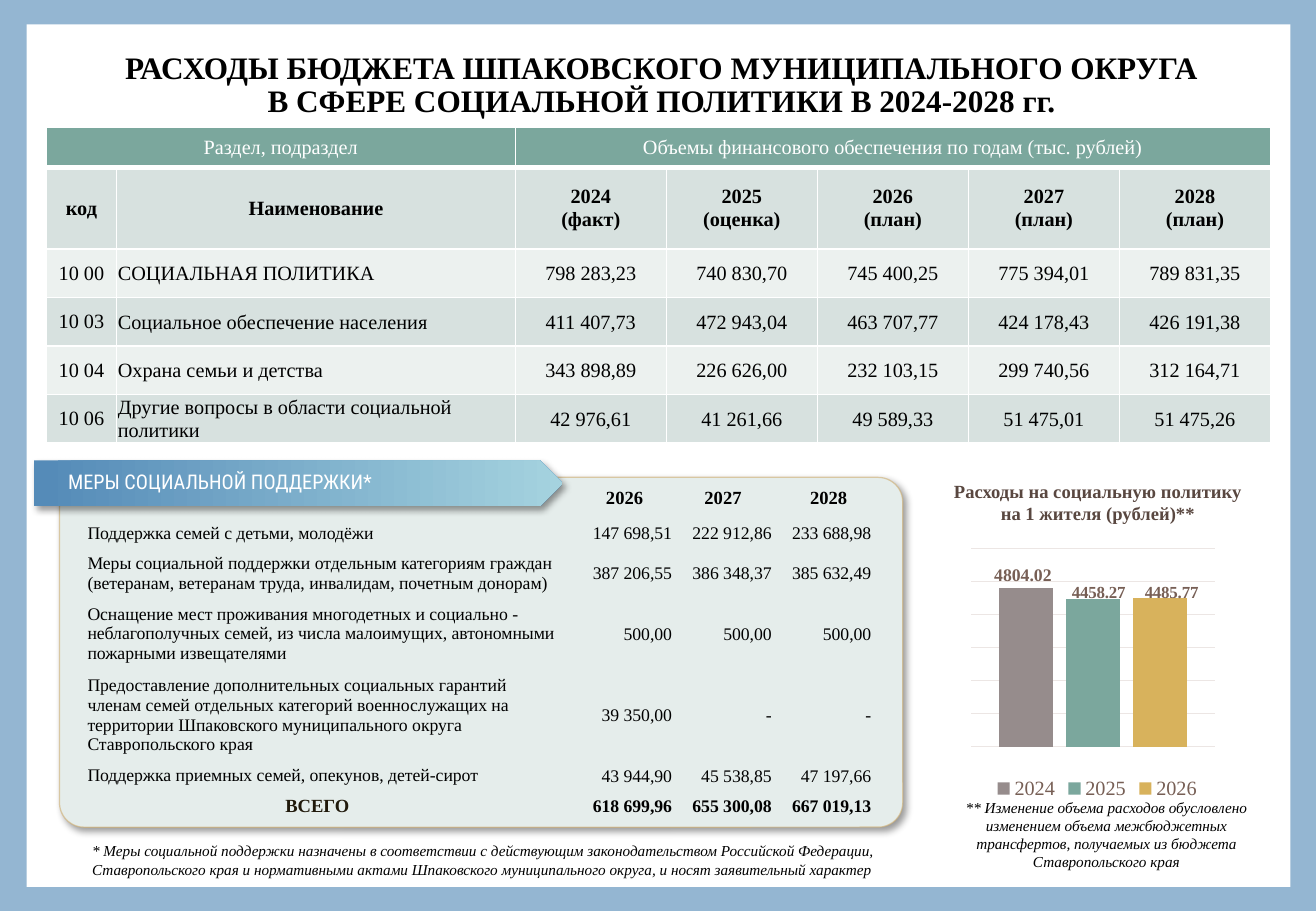
"""Build the slide on social policy spending of the Shpakovsky district."""
from dataclasses import dataclass
from typing import Any

import pptx
import pptx.chart.data
import pptx.dml.color
import pptx.enum.chart
import pptx.enum.shapes
import pptx.enum.text
import pptx.oxml.ns
import pptx.util
from lxml import etree

Pt = pptx.util.Pt
ALIGN = pptx.enum.text.PP_ALIGN
SHAPE = pptx.enum.shapes.MSO_SHAPE
MIDDLE = pptx.enum.text.MSO_ANCHOR.MIDDLE
WIDTH, HEIGHT = pptx.util.Inches(10.83), pptx.util.Inches(7.5)
SERIF = "Times New Roman"
PLAIN = "{2D5ABB26-0587-4C30-8999-92F81FD0307C}"

COLORS = {
    "back": "94B6D2", "white": "FFFFFF", "black": "000000", "panel": "E5EDEB",
    "gold": "D0AF72", "head": "7BA79D", "dark": "D7E1DF", "light": "ECF1EF",
    "brown": "594740", "label": "775F55", "grid": "ECE6E4", "total": "20190B",
    "start": "558BB8", "end": "A5D3DF",
    "2024": "968C8C", "2025": "7BA79D", "2026": "D8B25C",
}
FORMS: dict[str, dict[str, Any]] = {
    "title": {"name": SERIF, "size": Pt(18.5), "bold": True},
    "cell": {"name": SERIF, "size": Pt(12), "bold": False},
    "strong": {"name": SERIF, "size": Pt(12), "bold": True},
    "sub": {"name": SERIF, "size": Pt(11), "bold": True},
    "small": {"name": SERIF, "size": Pt(10.5), "bold": False},
    "sum": {"name": SERIF, "size": Pt(10.5), "bold": True},
    "mark": {"name": SERIF, "size": Pt(10), "bold": True},
    "note": {"name": SERIF, "size": Pt(9), "italic": True},
    "tag": {"name": "Roboto Condensed", "size": Pt(12), "bold": False},
}


@dataclass(frozen=True)
class Box:
    left: float
    top: float
    width: float
    height: float

    def place(self) -> tuple[int, int, int, int]:
        return wide(self.left), high(self.top), wide(self.width), high(self.height)


@dataclass(frozen=True)
class Label:
    box: Box
    lines: list[str]
    form: str
    color: str = "black"
    align: Any = ALIGN.CENTER
    space: float = 1.0


@dataclass(frozen=True)
class Bar:
    year: str
    value: float
    form: str
    shift: tuple[float, float]


LABELS = [
    Label(Box(5.91, 5.07, 88.64, 8.8), ["РАСХОДЫ БЮДЖЕТА ШПАКОВСКОГО МУНИЦИПАЛЬНОГО ОКРУГА",
          "В СФЕРЕ СОЦИАЛЬНОЙ ПОЛИТИКИ В 2024-2028 гг."], "title", space=0.9),
    Label(Box(71.47, 52, 23.91, 6.27),
          ["Расходы на социальную политику на 1 жителя (рублей)**"], "sub", "brown"),
    Label(Box(72.11, 86.93, 23.91, 9.47),
          ["** Изменение объема расходов обусловлено изменением объема межбюджетных "
           "трансфертов, получаемых из бюджета Ставропольского края"], "note"),
    Label(Box(6.09, 91.73, 62.51, 5.33),
          ["* Меры социальной поддержки назначены в соответствии с действующим законодательством "
           "Российской Федерации, Ставропольского края и нормативными актами Шпаковского "
           "муниципального округа, и носят заявительный характер"], "note", align=ALIGN.LEFT),
]
BUDGET = [
    ["Раздел, подраздел", "", "Объемы финансового обеспечения по годам (тыс. рублей)", "", "", "", ""],
    ["код", "Наименование", "2024\n(факт)", "2025\n(оценка)", "2026\n(план)", "2027\n(план)", "2028\n(план)"],
    ["10 00", "СОЦИАЛЬНАЯ ПОЛИТИКА", "798 283,23", "740 830,70", "745 400,25", "775 394,01", "789 831,35"],
    ["10 03", "Социальное обеспечение населения",
     "411 407,73", "472 943,04", "463 707,77", "424 178,43", "426 191,38"],
    ["10 04", "Охрана семьи и детства", "343 898,89", "226 626,00", "232 103,15", "299 740,56", "312 164,71"],
    ["10 06", "Другие вопросы в области социальной политики",
     "42 976,61", "41 261,66", "49 589,33", "51 475,01", "51 475,26"],
]
SUPPORT = [
    ["", "2026", "2027", "2028"],
    ["Поддержка семей с детьми, молодёжи", "147 698,51", "222 912,86", "233 688,98"],
    ["Меры социальной поддержки отдельным категориям граждан (ветеранам, ветеранам труда, "
     "инвалидам, почетным донорам)", "387 206,55", "386 348,37", "385 632,49"],
    ["Оснащение мест проживания многодетных и социально - неблагополучных семей, из числа "
     "малоимущих, автономными пожарными извещателями", "500,00", "500,00", "500,00"],
    ["Предоставление дополнительных социальных гарантий членам семей отдельных категорий "
     "военнослужащих на территории Шпаковского муниципального округа Ставропольского края",
     "39 350,00", "-", "-"],
    ["Поддержка приемных семей, опекунов, детей-сирот", "43 944,90", "45 538,85", "47 197,66"],
    ["ВСЕГО", "618 699,96", "655 300,08", "667 019,13"],
]
BARS = [Bar("2024", 4804.02, "sum", (-0.01, 0.01)), Bar("2025", 4458.27, "mark", (0.02, 0.03)),
        Bar("2026", 4485.77, "mark", (0.04, 0.03))]


def wide(share: float) -> int:
    return round(WIDTH * share / 100)


def high(share: float) -> int:
    return round(HEIGHT * share / 100)


def tint(name: str) -> pptx.dml.color.RGBColor:
    return pptx.dml.color.RGBColor.from_string(COLORS[name])


def node(parent: Any, tag: str, **attrs: str) -> Any:
    return etree.SubElement(parent, pptx.oxml.ns.qn(tag), attrs)


def style(font: Any, form: str, color: str) -> None:
    for key, value in FORMS[form].items():
        setattr(font, key, value)
    font.color.rgb = tint(color)


def write(frame: Any, lines: list[str], form: str, color: str, align: Any, space: Any = 1.0) -> None:
    frame.word_wrap = True
    for spot, line in enumerate(lines):
        para = frame.add_paragraph() if spot else frame.paragraphs[0]
        para.alignment, para.line_spacing = align, space
        run = para.add_run()
        run.text = line
        style(run.font, form, color)


def inset(cell: Any, left: float, top: float, right: float, base: float) -> None:
    cell.margin_left, cell.margin_right = wide(left), wide(right)
    cell.margin_top, cell.margin_bottom = high(top), high(base)


def edge(cell: Any, base: float) -> None:
    for side in "LRTB":
        line = node(cell._tc.get_or_add_tcPr(), f"a:ln{side}", w=str(Pt(base if side == "B" else 1)))
        node(node(line, "a:solidFill"), "a:srgbClr", val=COLORS["white"])


def shade(shape: Any) -> None:
    shape.shadow.inherit = False
    group = shape._element.spPr.find(pptx.oxml.ns.qn("a:effectLst"))
    cast = node(group, "a:outerShdw", blurRad=str(Pt(4)), dist=str(Pt(3)), dir="2700000",
                algn="tl", rotWithShape="0")
    node(node(cast, "a:srgbClr", val=COLORS["black"]), "a:alpha", val="40000")


def block(slide: Any, kind: Any, box: Box, color: str) -> Any:
    shape = slide.shapes.add_shape(kind, *box.place())
    shape.fill.solid()
    shape.fill.fore_color.rgb = tint(color)
    shape.line.fill.background()
    shape.shadow.inherit = False
    return shape


def table(slide: Any, box: Box, cols: list[float], rows: list[float]) -> Any:
    grid = slide.shapes.add_table(len(rows), len(cols), *box.place()).table
    grid.first_row = grid.horz_banding = False
    grid._tbl.tblPr.find(pptx.oxml.ns.qn("a:tableStyleId")).text = PLAIN
    for col, share in zip(grid.columns, cols):
        col.width = wide(share)
    for row, share in zip(grid.rows, rows):
        row.height = high(share)
    return grid


def budget(slide: Any) -> None:
    grid = table(slide, Box(3.51, 14, 93.05, 34.65), [5.36, 30.29] + [11.48] * 5, [4.4, 8.93] + [5.33] * 4)
    for r, row in enumerate(BUDGET):
        for c, text in enumerate(row):
            cell = grid.cell(r, c)
            edge(cell, 1 if r else 3)
            cell.fill.solid()
            cell.fill.fore_color.rgb = tint("head" if r == 0 else "dark" if r % 2 else "light")
            cell.vertical_anchor = MIDDLE
            if r > 1 and c:
                inset(cell, 0.09, 0.13, 0.09, 0)
            align = ALIGN.LEFT if r > 1 and c == 1 else ALIGN.CENTER
            write(cell.text_frame, text.split("\n"), "strong" if r == 1 else "cell",
                  "black" if r else "white", align)
    grid.cell(0, 0).merge(grid.cell(0, 1))
    grid.cell(0, 2).merge(grid.cell(0, 6))


def support(slide: Any) -> None:
    grid = table(slide, Box(5.82, 52.67, 60.48, 37.46), [37.95, 7.39, 7.57, 7.57],
                 [4.13, 3.47, 5.33, 8, 9.87, 3.33, 3.33])
    last = len(SUPPORT) - 1
    for r, row in enumerate(SUPPORT):
        for c, text in enumerate(row):
            cell = grid.cell(r, c)
            cell.fill.background()
            cell.vertical_anchor = MIDDLE
            if (r == 0 and c) or (c == 0 and 0 < r < last):
                inset(cell, 1.75 if c == 3 else 0.83, 0.4, 0.83, 0.4)
            else:
                inset(cell, 0.09, 0.13, 1.45 if c == 0 else 0.09, 0)
            total = r == last and c == 0
            form = "sub" if r == 0 or total else "sum" if r == last else "small"
            align = ALIGN.CENTER if r == 0 or total else ALIGN.RIGHT if c else ALIGN.LEFT
            write(cell.text_frame, [text], form, "total" if total else "black", align)


def layout(parent: Any, spot: int, **values: Any) -> None:
    for old in parent.findall(pptx.oxml.ns.qn("c:layout")):
        parent.remove(old)
    frame = node(parent, "c:layout")
    parent.insert(spot, frame)
    form = node(frame, "c:manualLayout")
    for key, value in values.items():
        node(form, f"c:{key}", val=str(value))


def chart(slide: Any) -> None:
    data = pptx.chart.data.CategoryChartData()
    data.categories = ["1"]
    for bar in BARS:
        data.add_series(bar.year, [bar.value])
    kind = pptx.enum.chart.XL_CHART_TYPE.COLUMN_CLUSTERED
    graph = slide.shapes.add_chart(kind, *Box(72.76, 58.4, 21.24, 29.87).place(), data).chart
    graph.has_title = False
    graph.font.name, graph.font.size = SERIF, Pt(10)
    graph.has_legend = True
    graph.legend.position = pptx.enum.chart.XL_LEGEND_POSITION.BOTTOM
    graph.legend.include_in_layout = False
    style(graph.legend.font, "cell", "label")
    axis = graph.value_axis
    axis.minimum_scale, axis.maximum_scale, axis.major_unit = 0, 6000, 1000
    axis.major_gridlines.format.line.color.rgb = tint("grid")
    axis.major_gridlines.format.line.width = Pt(0.75)
    axis.visible = graph.category_axis.visible = False
    plot = graph.plots[0]
    plot.gap_width, plot.overlap, plot.vary_by_categories = 100, -24, False
    layout(graph._chartSpace.chart.plotArea, 0, layoutTarget="inner", xMode="edge", yMode="edge",
           x=0.05, y=0.06, w=0.87, h=0.73)
    for bar, series in zip(BARS, plot.series):
        series.format.fill.solid()
        series.format.fill.fore_color.rgb = tint(bar.year)
        label = series.points[0].data_label
        style(label.font, bar.form, "label")
        label.position = pptx.enum.chart.XL_LABEL_POSITION.OUTSIDE_END
        layout(label._dLbl, 1, x=bar.shift[0], y=bar.shift[1])


def main() -> None:
    deck = pptx.Presentation()
    deck.slide_width, deck.slide_height = WIDTH, HEIGHT
    slide = deck.slides.add_slide(deck.slide_layouts[6])
    slide.background.fill.solid()
    slide.background.fill.fore_color.rgb = tint("back")
    block(slide, SHAPE.RECTANGLE, Box(2.03, 2.67, 96.03, 94.67), "white")
    panel = block(slide, SHAPE.ROUNDED_RECTANGLE, Box(4.52, 52.4, 64.08, 38.4), "panel")
    panel.adjustments[0] = 0.07
    panel.line.color.rgb, panel.line.width = tint("gold"), Pt(0.75)
    node(panel.line._ln.find(".//" + pptx.oxml.ns.qn("a:srgbClr")), "a:alpha", val="60000")
    shade(panel)
    budget(slide)
    chart(slide)
    support(slide)
    banner = block(slide, SHAPE.PENTAGON, Box(2.59, 50.53, 40.17, 5.07), "start")
    banner.fill.gradient()
    banner.fill.gradient_angle = 0
    for stop, color, spot in zip(banner.fill.gradient_stops, ("start", "end"), (0.02, 1)):
        stop.color.rgb, stop.position = tint(color), spot
    shade(banner)
    banner.text_frame.margin_left = wide(2.59)
    banner.text_frame.vertical_anchor = MIDDLE
    write(banner.text_frame, ["МЕРЫ СОЦИАЛЬНОЙ ПОДДЕРЖКИ*"], "tag", "white", ALIGN.LEFT, Pt(12))
    for item in LABELS:
        frame = slide.shapes.add_textbox(*item.box.place()).text_frame
        write(frame, item.lines, item.form, item.color, item.align, item.space)
    deck.save("out.pptx")


if __name__ == "__main__":
    main()
